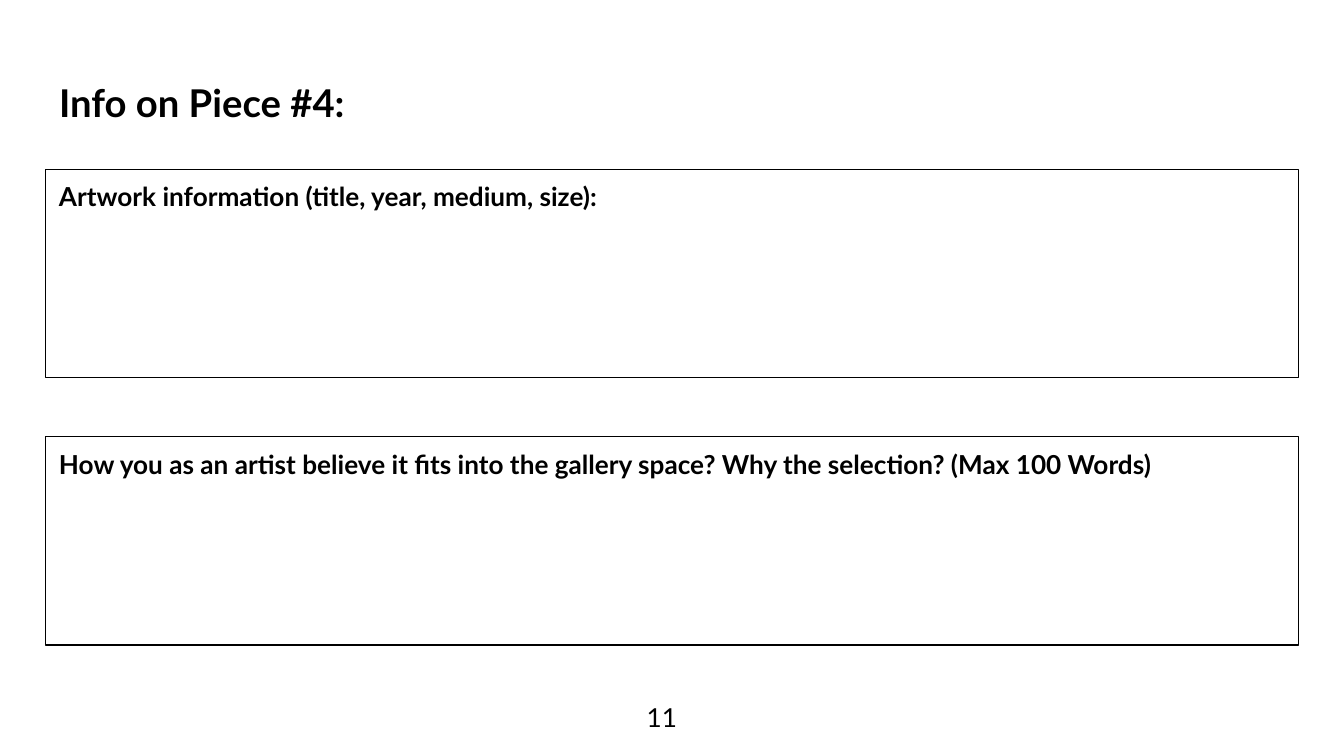
from dataclasses import dataclass

from pptx import Presentation
from pptx.dml.color import RGBColor
from pptx.enum.shapes import MSO_SHAPE
from pptx.enum.text import MSO_ANCHOR as Anchor, MSO_AUTO_SIZE as AutoSize, PP_ALIGN as Align
from pptx.util import Pt


@dataclass(frozen=True)
class Theme:
    font: str = "Lato"
    ink: RGBColor = RGBColor(0, 0, 0)
    paper: RGBColor = RGBColor(255, 255, 255)
    title_size: float = 20.5
    text_size: float = 14
    border: float = 0.75


theme = Theme()
PX = 4572
MARGIN, CONTENT_WIDTH, INSET = 68, 1864, 20
BOX_TOP, BOX_HEIGHT, BOX_GAP = 252, 310, 88


def write_text(shape, text, size=theme.text_size, bold=True, align=Align.LEFT,
               spacing=1.0, auto_size=AutoSize.NONE):
    frame = shape.text_frame
    frame.word_wrap = True
    frame.auto_size = auto_size
    frame.vertical_anchor = Anchor.TOP
    frame.margin_left = frame.margin_right = INSET * PX
    frame.margin_top = frame.margin_bottom = INSET * PX
    paragraph = frame.paragraphs[0]
    paragraph.alignment = align
    paragraph.line_spacing = spacing
    paragraph.space_before = Pt(0)
    run = paragraph.add_run()
    run.text = text
    run.font.name = theme.font
    run.font.size = Pt(size)
    run.font.bold = bold
    run.font.color.rgb = theme.ink


presentation = Presentation()
presentation.slide_width = 2000 * PX
presentation.slide_height = 1125 * PX
slide = presentation.slides.add_slide(presentation.slide_layouts[5])
slide.background.fill.solid()
slide.background.fill.fore_color.rgb = theme.paper

title = slide.shapes.title
title.left, title.top = MARGIN * PX, 98 * PX
title.width, title.height = CONTENT_WIDTH * PX, 126 * PX
write_text(title, "Info on Piece #4:", size=theme.title_size)

prompts = [
    "Artwork information (title, year, medium, size):",
    "How you as an artist believe it fits into the gallery space? Why the selection? (Max 100 Words)",
]
for index, prompt in enumerate(prompts):
    top = BOX_TOP + index * (BOX_HEIGHT + BOX_GAP)
    box = slide.shapes.add_shape(
        MSO_SHAPE.RECTANGLE, MARGIN * PX, top * PX, CONTENT_WIDTH * PX, BOX_HEIGHT * PX
    )
    box.shadow.inherit = False
    box.fill.background()
    box.line.color.rgb = theme.ink
    box.line.width = Pt(theme.border)
    write_text(box, prompt, spacing=0.95)

page_number = slide.shapes.add_textbox(462 * PX, 1024 * PX, 1046 * PX, 88 * PX)
write_text(page_number, "11", bold=False, align=Align.CENTER,
           auto_size=AutoSize.SHAPE_TO_FIT_TEXT)

presentation.save("out.pptx")
